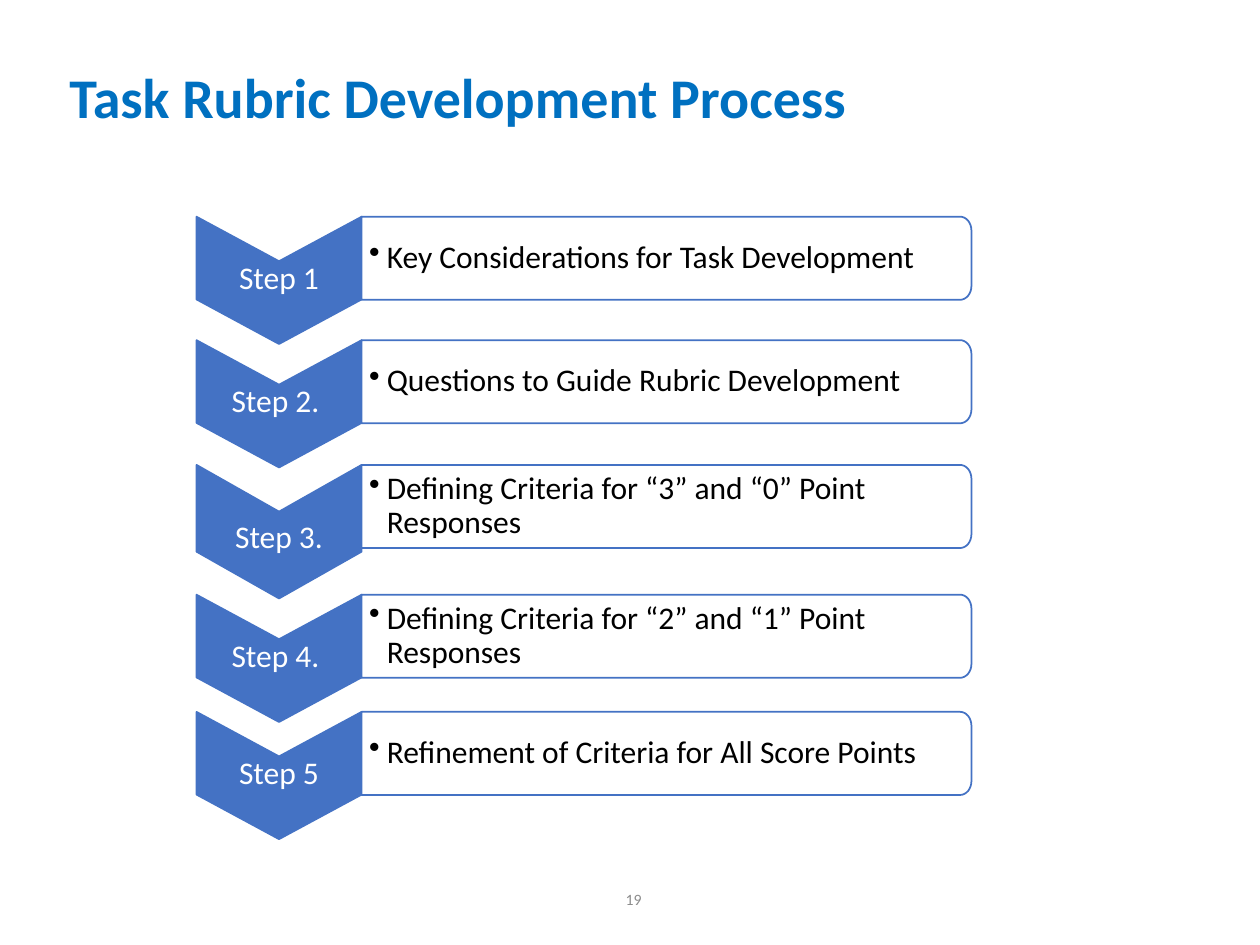
from math import cos, pi, sin

from lxml.etree import SubElement
from pptx import Presentation
from pptx.dml.color import RGBColor
from pptx.enum.text import MSO_ANCHOR as Anchor, MSO_AUTO_SIZE as AutoSize, PP_ALIGN as Align
from pptx.oxml.ns import qn
from pptx.util import Inches, Pt

TITLE_BLUE = RGBColor(0x00, 0x70, 0xC0)
STEP_BLUE = RGBColor(0x44, 0x72, 0xC4)
WHITE = RGBColor(0xFF, 0xFF, 0xFF)
BLACK = RGBColor(0x00, 0x00, 0x00)
GRAY = RGBColor(0x8C, 0x8C, 0x8C)

CHEVRON_LEFT, CHEVRON_WIDTH = 1.56, 1.31
PANEL_LEFT, PANEL_WIDTH, PANEL_HEIGHT = 2.87, 4.84, 0.66
CORNER_WIDTH, CORNER_HEIGHT, CORNER_PARTS = 0.09, 0.11, 8

STEPS = [
    (1.72, 1.01, 0.36, "Step 1", "Key Considerations for Task Development"),
    (2.7, 1.01, 0.36, "Step 2. ", "Questions to Guide Rubric Development"),
    (3.69, 1.06, 0.45, "Step 3.", "Defining Criteria for “3” and “0” Point Responses"),
    (4.72, 1.01, 0.36, "Step 4. ", "Defining Criteria for “2” and “1” Point Responses"),
    (5.65, 1.01, 0.36, "Step 5", "Refinement of Criteria for All Score Points"),
]


class SlideBuilder:
    """Draws the elements of one slide in a shared style."""

    def __init__(self, slide, font_name="Calibri"):
        self.slide = slide
        self.font_name = font_name

    def set_text(self, shape, text, size, color, align, anchor, insets, bold=False, bullet=False):
        frame = shape.text_frame
        frame.word_wrap = True
        frame.auto_size = AutoSize.NONE
        frame.vertical_anchor = anchor
        (frame.margin_left, frame.margin_top,
         frame.margin_right, frame.margin_bottom) = map(Inches, insets)
        frame.text = text
        paragraph = frame.paragraphs[0]
        paragraph.alignment = align
        paragraph.line_spacing = 0.9
        if bullet:
            properties = paragraph._p.get_or_add_pPr()
            properties.set("marL", str(Inches(0.14)))
            properties.set("indent", str(Inches(-0.14)))
            SubElement(properties, qn("a:buChar")).set("char", "•")
        font = paragraph.font
        font.name, font.size, font.bold = self.font_name, Pt(size), bold
        font.color.rgb = color

    def title(self, text):
        title = self.slide.shapes.title
        title.left, title.top = Inches(0.45), Inches(0.33)
        title.width, title.height = Inches(9.1), Inches(0.94)
        self.set_text(title, text, 32, TITLE_BLUE, Align.LEFT, Anchor.MIDDLE,
                      (0.1, 0.05, 0.1, 0.05), bold=True)

    def page_number(self, text):
        box = self.slide.shapes.add_textbox(Inches(2.94), Inches(6.95), Inches(2.25), Inches(0.4))
        self.set_text(box, text, 9, GRAY, Align.RIGHT, Anchor.MIDDLE, (0.1, 0.05, 0.1, 0.05))

    def outline(self, points, fill):
        start, *others = [(Inches(x), Inches(y)) for x, y in points]
        builder = self.slide.shapes.build_freeform(*start)
        builder.add_line_segments(others, close=True)
        shape = builder.convert_to_shape()
        shape.shadow.inherit = False
        shape.fill.solid()
        shape.fill.fore_color.rgb = fill
        shape.line.color.rgb = STEP_BLUE
        shape.line.width = Pt(1)
        return shape

    def chevron(self, top, height, text_inset, label):
        notch = 0.35 * height
        left, right = CHEVRON_LEFT, CHEVRON_LEFT + CHEVRON_WIDTH
        middle, bottom = (left + right) / 2, top + height
        shape = self.outline([(left, top), (middle, top + notch), (right, top),
                              (right, bottom - notch), (middle, bottom),
                              (left, bottom - notch)], STEP_BLUE)
        self.set_text(shape, label, 18, WHITE, Align.CENTER, Anchor.TOP, (0, text_inset, 0, 0.36))

    def panel(self, top, text):
        right, bottom = PANEL_LEFT + PANEL_WIDTH, top + PANEL_HEIGHT
        angles = [pi / 2 * part / CORNER_PARTS for part in range(CORNER_PARTS + 1)]
        upper = [(right - CORNER_WIDTH * (1 - sin(angle)),
                  top + CORNER_HEIGHT * (1 - cos(angle))) for angle in angles]
        lower = [(x, top + bottom - y) for x, y in reversed(upper)]
        shape = self.outline([(PANEL_LEFT, top), *upper, *lower, (PANEL_LEFT, bottom)], WHITE)
        self.set_text(shape, text, 18, BLACK, Align.LEFT, Anchor.MIDDLE,
                      (0.06, 0.04, 0.04, 0.04), bullet=True)


def main():
    presentation = Presentation()
    presentation.slide_width, presentation.slide_height = Inches(10), Inches(7.5)
    builder = SlideBuilder(presentation.slides.add_slide(presentation.slide_layouts[5]))
    builder.page_number("19")
    builder.title("Task Rubric Development Process")
    for top, height, text_inset, label, text in STEPS:
        builder.chevron(top, height, text_inset, label)
        builder.panel(top, text)
    presentation.save("out.pptx")


if __name__ == "__main__":
    main()
